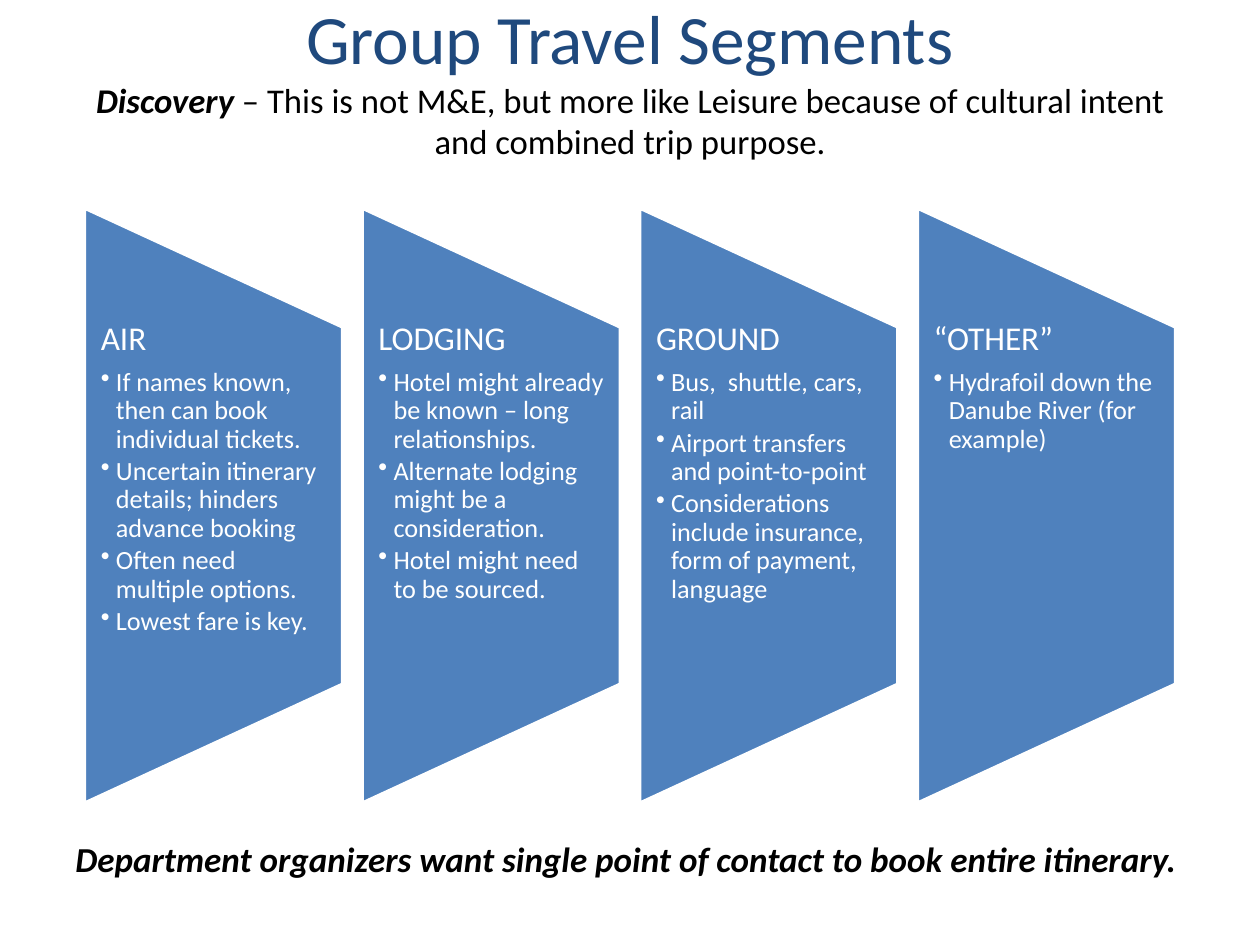
from dataclasses import dataclass

from lxml import etree
from pptx import Presentation
from pptx.dml.color import RGBColor
from pptx.enum.shapes import MSO_SHAPE
from pptx.enum.text import MSO_ANCHOR, MSO_AUTO_SIZE, PP_ALIGN
from pptx.oxml.ns import qn
from pptx.util import Inches, Pt

CENTER, LEFT = PP_ALIGN.CENTER, PP_ALIGN.LEFT
TOP, MIDDLE = MSO_ANCHOR.TOP, MSO_ANCHOR.MIDDLE
FIXED, GROW = MSO_AUTO_SIZE.NONE, MSO_AUTO_SIZE.SHAPE_TO_FIT_TEXT
PANEL = MSO_SHAPE.FLOWCHART_MANUAL_OPERATION
TITLE_ONLY = 5


@dataclass(frozen=True)
class Theme:
    font: str = "Calibri"
    navy: str = "1F497D"
    blue: str = "4F81BD"
    white: str = "FFFFFF"
    black: str = "000000"
    title: float = 39.6
    lead: float = 19.8
    head: float = 19
    item: float = 15
    foot: float = 20


THEME = Theme()
WIDE, HIGH = Inches(10), Inches(7.5)
COLS, EDGE, COL = 4, 0.067, 0.205
STEP = (1 - 2 * EDGE - COL) / (COLS - 1)

SEGMENTS = [
    ("AIR", ["If names known, then can book individual tickets.",
             "Uncertain itinerary details; hinders advance booking",
             "Often need multiple options.",
             "Lowest fare is key."]),
    ("LODGING", ["Hotel might already be known – long relationships.",
                 "Alternate lodging might be a consideration.",
                 "Hotel might need to be sourced."]),
    ("GROUND", ["Bus,  shuttle, cars, rail",
                "Airport transfers and point-to-point",
                "Considerations include insurance, form of payment, language"]),
    ("“OTHER”", ["Hydrafoil down the Danube River (for example)"]),
]


def write(para, text, size, color, bold=False, italic=False):
    run = para.add_run()
    run.text = text
    font = run.font
    font.name, font.size = THEME.font, Pt(size)
    font.bold, font.italic = bold, italic
    font.color.rgb = RGBColor.from_string(color)


def indent(para, left, first=0.0, mark=None):
    props = para._p.get_or_add_pPr()
    props.set("marL", str(Inches(left)))
    props.set("indent", str(Inches(first)))
    if mark:
        etree.SubElement(props, qn("a:buChar")).set("char", mark)


class Page:
    def __init__(self, deck, theme):
        self.theme = theme
        self.slide = deck.slides.add_slide(deck.slide_layouts[TITLE_ONLY])

    def box(self, x, y, w, h):
        return int(x * WIDE), int(y * HIGH), int(w * WIDE), int(h * HIGH)

    def title(self, head, term, lead, area):
        shape = self.slide.shapes.title
        shape.left, shape.top, shape.width, shape.height = self.box(*area)
        frame = shape.text_frame
        frame.auto_size, frame.vertical_anchor = FIXED, MIDDLE
        para = frame.paragraphs[0]
        para.alignment = CENTER
        look = self.theme
        write(para, head, look.title, look.navy)
        para.add_line_break()
        write(para, term, look.lead, look.black, bold=True, italic=True)
        write(para, lead, look.lead, look.black)

    def panel(self, area):
        x, y, w, h = self.box(*area)
        shape = self.slide.shapes.add_shape(
            PANEL, x + (w - h) // 2, y + (h - w) // 2, h, w)
        shape.rotation = 270
        shape.shadow.inherit = False
        shape.fill.solid()
        shape.fill.fore_color.rgb = RGBColor.from_string(self.theme.blue)
        shape.line.color.rgb = RGBColor.from_string(self.theme.white)
        shape.line.width = Pt(2)

    def frame(self, area):
        frame = self.slide.shapes.add_textbox(*self.box(*area)).text_frame
        frame.word_wrap = True
        return frame

    def points(self, head, items, area):
        look = self.theme
        frame = self.frame(area)
        frame.auto_size, frame.vertical_anchor = FIXED, TOP
        frame.margin_left = frame.margin_right = Inches(0.13)
        frame.margin_top = frame.margin_bottom = 0
        para = frame.paragraphs[0]
        self.line(para, head, look.head, 0.35)
        for item in items:
            para = frame.add_paragraph()
            para.level = 1
            indent(para, 0.12, -0.12, "•")
            self.line(para, item, look.item, 0.15)

    def line(self, para, text, size, after):
        para.alignment, para.line_spacing = LEFT, 0.9
        para.space_after = Pt(size * after)
        write(para, text, size, self.theme.white)

    def note(self, text, area):
        frame = self.frame(area)
        frame.auto_size = GROW
        para = frame.paragraphs[0]
        para.alignment, para.level = CENTER, 2
        indent(para, 0.44)
        write(para, text, self.theme.foot, self.theme.black,
              bold=True, italic=True)


def main():
    deck = Presentation()
    deck.slide_width, deck.slide_height = WIDE, HIGH
    page = Page(deck, THEME)
    page.title("Group Travel Segments", "Discovery",
               " – This is not M&E, but more like Leisure because of "
               "cultural intent and combined trip purpose.",
               (0.05, 0, 0.9, 1 / 6))
    for col, (head, items) in enumerate(SEGMENTS):
        left = EDGE + col * STEP
        page.panel((left, 0.22, COL, 0.63))
        page.points(head, items, (left, 0.34, COL, 0.38))
    page.note("Department organizers want single point of contact to book "
              "entire itinerary.", (-0.03, 0.88, 1.01, 0.06))
    deck.save("out.pptx")


if __name__ == "__main__":
    main()
